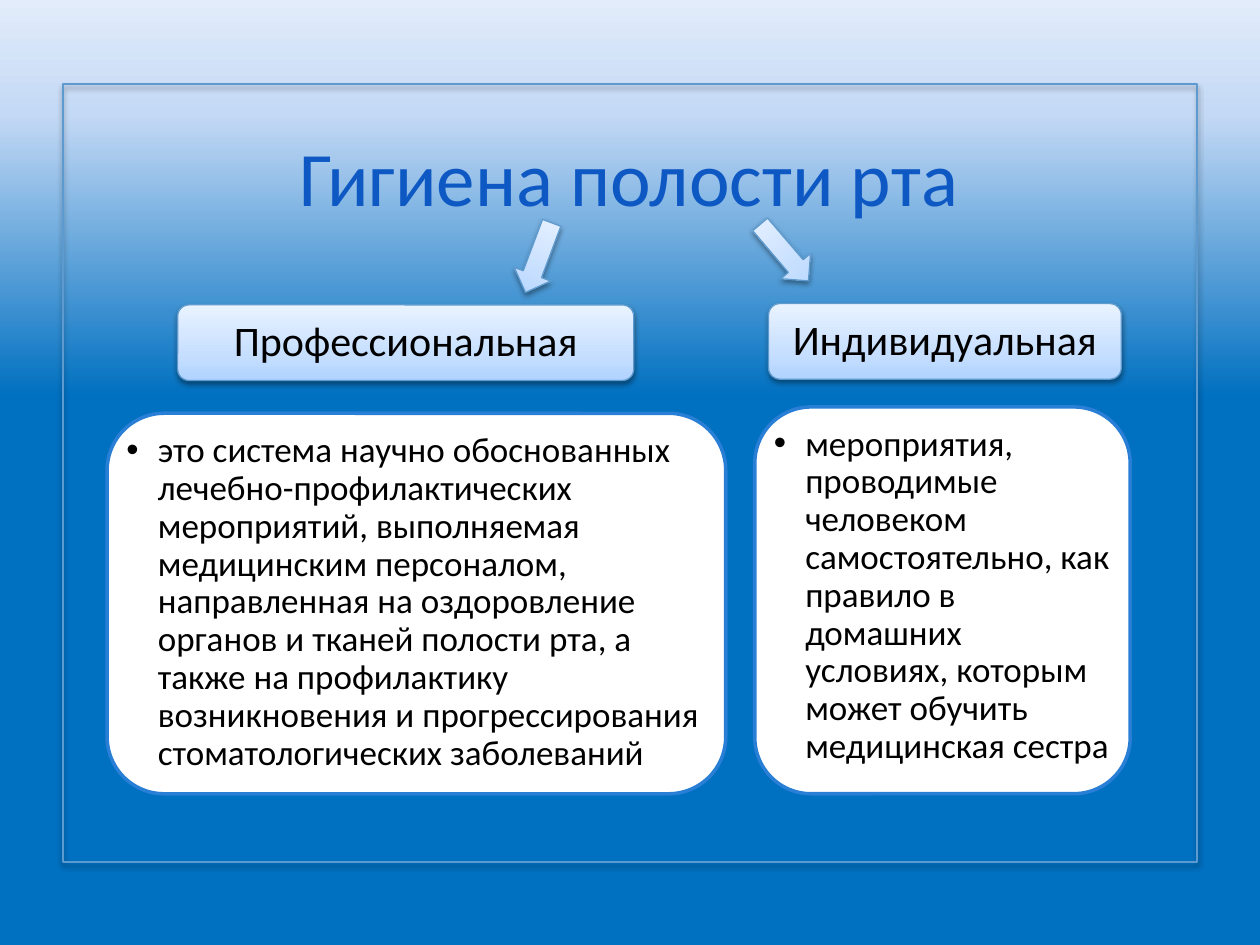
from copy import deepcopy
from dataclasses import dataclass

from lxml.etree import SubElement
from pptx import Presentation
from pptx.dml.color import RGBColor
from pptx.enum.shapes import MSO_SHAPE
from pptx.enum.text import MSO_ANCHOR, PP_ALIGN
from pptx.oxml.ns import qn
from pptx.util import Inches, Pt

COLUMNS, ROWS = 100, 75
WIDTH, HEIGHT = Inches(10), Inches(7.5)


@dataclass(frozen=True)
class Theme:
    font: str = "Calibri"
    title_size: float = 44
    label_size: float = 24
    body_size: float = 20
    title: str = "0E58C4"
    text: str = "000000"
    panel: str = "FFFFFF"
    panel_line: str = "297FD5"
    line: str = "5D9ACF"
    shadow: str = "000000"
    sky: tuple = ((58, "0070C0"), (88, "C4D9F5"), (100, "E2ECFA"))
    ice: tuple = ((0, "B0D3FF"), (35, "C7DFFF"), (100, "E9F3FF"))


THEME = Theme()


def place(columns, rows, width, height):
    column, row = WIDTH / COLUMNS, HEIGHT / ROWS
    return [int(v) for v in (columns * column, rows * row, width * column, height * row)]


def fill_gradient(fill, owner, stops):
    fill.gradient()
    fill.gradient_angle = 90
    stop_list = owner.find(".//" + qn("a:gsLst"))
    stop_list.append(deepcopy(stop_list[0]))
    for stop, (position, color) in zip(fill.gradient_stops, stops):
        stop.position = position / 100
        stop.color.rgb = RGBColor.from_string(color)


def add_shadow(shape, opacity, distance):
    effects = shape.element.spPr.find(qn("a:effectLst"))
    shadow = SubElement(effects, qn("a:outerShdw"), blurRad=str(Pt(3.1)),
                        dist=str(Pt(distance)), dir="5400000", rotWithShape="0")
    color = SubElement(shadow, qn("a:srgbClr"), val=THEME.shadow)
    SubElement(color, qn("a:alpha"), val=str(opacity * 1000))


def add_outlined(slide, kind, area, color, weight):
    shape = slide.shapes.add_shape(kind, *place(*area))
    shape.shadow.inherit = False
    shape.line.color.rgb = RGBColor.from_string(color)
    shape.line.width = Pt(weight)
    return shape


def add_span(para, text, size, color):
    span = para.add_run()
    span.text = text
    span.font.name = THEME.font
    span.font.size = Pt(size)
    span.font.color.rgb = RGBColor.from_string(color)


def set_bullet(para, indent):
    properties = para._p.get_or_add_pPr()
    properties.set("marL", str(Inches(indent)))
    properties.set("indent", str(-Inches(indent)))
    SubElement(properties, qn("a:buFont"), typeface="Arial")
    SubElement(properties, qn("a:buChar"), char="•")


def write_box(shape, text, size, anchor, align, insets):
    frame = shape.text_frame
    frame.word_wrap = True
    frame.vertical_anchor = anchor
    frame.margin_left = frame.margin_right = Inches(insets[0])
    frame.margin_top = frame.margin_bottom = Inches(insets[1])
    para = frame.paragraphs[0]
    para.alignment = align
    para.line_spacing = 0.9
    add_span(para, text, size, THEME.text)
    return para


def add_frame(slide):
    frame = add_outlined(slide, MSO_SHAPE.RECTANGLE, (5, 6.7, 90, 61.7), THEME.line, 1.25)
    frame.fill.background()
    add_shadow(frame, 35, 1.8)


def add_title(slide, text):
    title = slide.shapes.title
    title.left, title.top, title.width, title.height = place(10.6, 6.8, 78.7, 14.3)
    title.text_frame.vertical_anchor = MSO_ANCHOR.MIDDLE
    para = title.text_frame.paragraphs[0]
    para.alignment = PP_ALIGN.CENTER
    add_span(para, text, THEME.title_size, THEME.title)


def add_icy(slide, kind, area):
    shape = add_outlined(slide, kind, area, THEME.line, 0.75)
    fill_gradient(shape.fill, shape.element, THEME.ice)
    add_shadow(shape, 38, 1.6)
    return shape


def add_label(slide, area, text):
    label = add_icy(slide, MSO_SHAPE.ROUNDED_RECTANGLE, area)
    label.adjustments[0] = 0.15
    write_box(label, text, THEME.label_size, MSO_ANCHOR.MIDDLE, PP_ALIGN.CENTER, (0.1, 0.05))


def add_panel(slide, area, text):
    panel = add_outlined(slide, MSO_SHAPE.ROUNDED_RECTANGLE, area, THEME.panel_line, 2)
    panel.fill.solid()
    panel.fill.fore_color.rgb = RGBColor.from_string(THEME.panel)
    panel.adjustments[0] = 0.15
    para = write_box(panel, text, THEME.body_size, MSO_ANCHOR.TOP, PP_ALIGN.LEFT, (0.02, 0.02))
    set_bullet(para, 0.25)


def add_arrow(slide, columns, rows, rotation):
    arrow = add_icy(slide, MSO_SHAPE.DOWN_ARROW, (columns, rows, 3.1, 5.9))
    arrow.rotation = rotation


def main():
    deck = Presentation()
    deck.slide_width, deck.slide_height = WIDTH, HEIGHT
    page = deck.slides.add_slide(deck.slide_layouts[5])
    fill_gradient(page.background.fill, page.element, THEME.sky)
    add_frame(page)
    add_title(page, "Гигиена полости рта")
    add_panel(page, (8.5, 32.8, 49.1, 30.2),
              "это система научно обоснованных лечебно-профилактических мероприятий, "
              "выполняемая медицинским персоналом, направленная на оздоровление органов "
              "и тканей полости рта, а также на профилактику возникновения и "
              "прогрессирования стоматологических заболеваний")
    add_label(page, (14.1, 24.2, 36.2, 6), "Профессиональная")
    add_panel(page, (59.9, 32.3, 29.8, 30.7),
              "мероприятия, проводимые человеком самостоятельно, как правило в домашних "
              "условиях, которым может обучить медицинская сестра")
    add_label(page, (61, 24.1, 28, 6), "Индивидуальная")
    add_arrow(page, 41.2, 17.5, 20.6)
    add_arrow(page, 60.7, 17.1, 319.5)
    deck.save("out.pptx")


if __name__ == "__main__":
    main()
